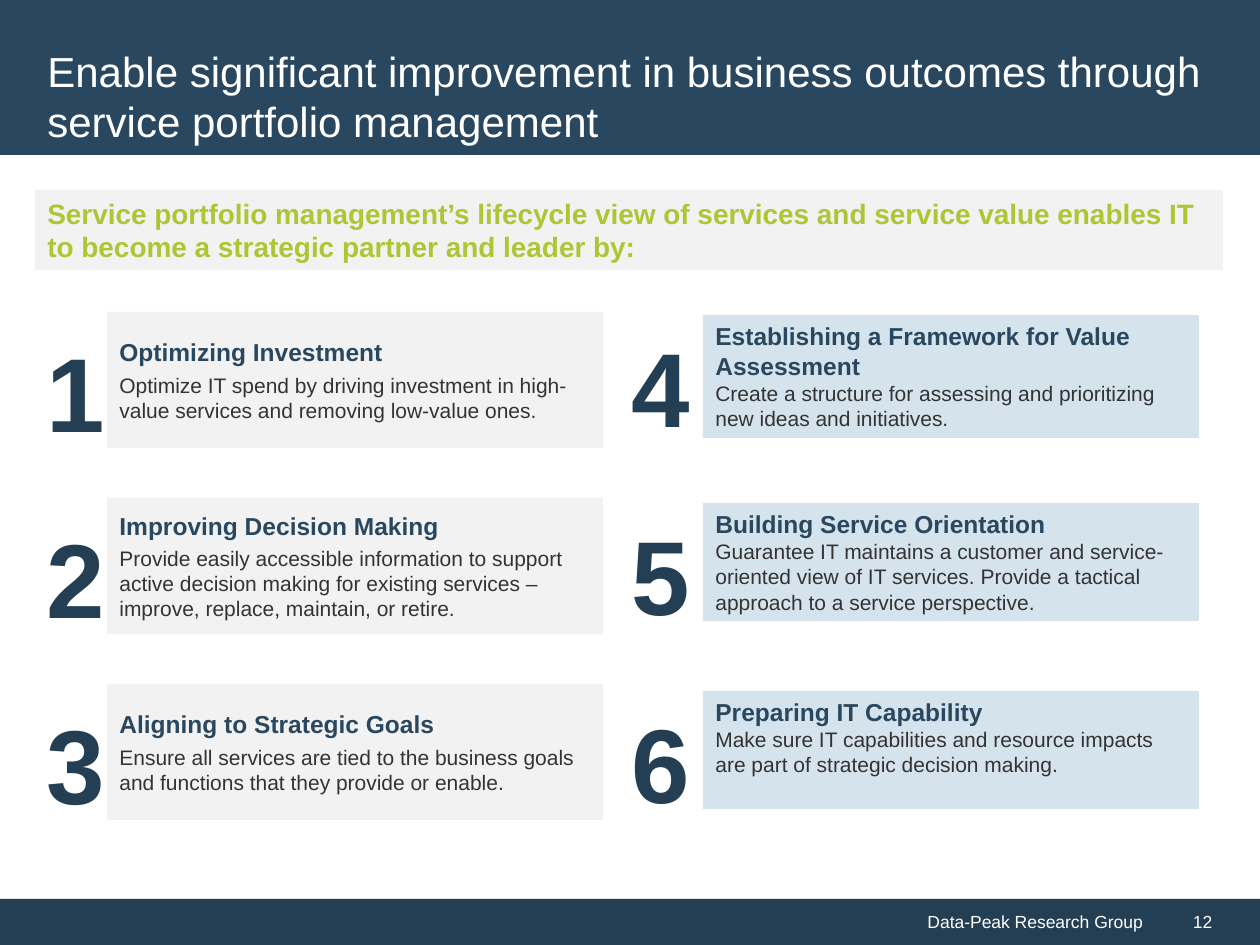
from pptx import Presentation
from pptx.dml.color import RGBColor
from pptx.enum.shapes import MSO_SHAPE
from pptx.enum.text import MSO_ANCHOR, PP_ALIGN
from pptx.util import Emu, Pt

PX = 914400 // 126
NAVY, BLUE, GREY, PALE = "243F54", "29475F", "F2F2F2", "D5E3ED"
WHITE, LIME, DARK = "FFFFFF", "B0C534", "333333"

TITLE = ("Enable significant improvement in business outcomes through "
         "service portfolio management")
LEAD = ("Service portfolio management’s lifecycle view of services and service "
        "value enables IT to become a strategic partner and leader by:")
FOOTER, PAGE = "Data-Peak Research Group", "12"

LEFT = [
    ("Optimizing Investment",
     "Optimize IT spend by driving investment in high-value services and "
     "removing low-value ones."),
    ("Improving Decision Making",
     "Provide easily accessible information to support active decision making "
     "for existing services – improve, replace, maintain, or retire."),
    ("Aligning to Strategic Goals",
     "Ensure all services are tied to the business goals and functions that "
     "they provide or enable."),
]
RIGHT = [
    ("Establishing a Framework for Value Assessment",
     "Create a structure for assessing and prioritizing new ideas and "
     "initiatives."),
    ("Building Service Orientation",
     "Guarantee IT maintains a customer and service-oriented view of IT "
     "services. Provide a tactical approach to a service perspective."),
    ("Preparing IT Capability",
     "Make sure IT capabilities and resource impacts are part of strategic "
     "decision making."),
]
COLUMNS = [
    dict(items=LEFT, first=1, x=107, y=312, step=186, heights=[136] * 3,
         fill=GREY, anchor=MSO_ANCHOR.MIDDLE, gap=3,
         num_x=34, num_y=321, num_w=116),
    dict(items=RIGHT, first=4, x=703, y=315, step=188, heights=[123, 118, 118],
         fill=PALE, anchor=MSO_ANCHOR.TOP, gap=0,
         num_x=619, num_y=316, num_w=139),
]


def color(text):
    return RGBColor.from_string(text)


def add_box(slide, x, y, w, h, fill=None):
    """Add a filled rectangle, or a plain text box when there is no fill."""
    area = [Emu(v * PX) for v in (x, y, w, h)]
    if fill is None:
        return slide.shapes.add_textbox(*area)
    box = slide.shapes.add_shape(MSO_SHAPE.RECTANGLE, *area)
    box.shadow.inherit = False
    box.fill.solid()
    box.fill.fore_color.rgb = color(fill)
    box.line.fill.background()
    return box


def write(box, lines, anchor=MSO_ANCHOR.TOP, align=PP_ALIGN.LEFT, gap=0):
    """Write (text, size, colour, bold) lines, one paragraph each."""
    frame = box.text_frame
    frame.text = "\n".join(line[0] for line in lines)
    frame.word_wrap = True
    frame.vertical_anchor = anchor
    for para, (_, size, tint, bold) in zip(frame.paragraphs, lines):
        para.alignment = align
        font = para.runs[0].font
        font.name, font.size, font.bold = "Arial", Pt(size), bold
        font.color.rgb = color(tint)
    if gap:
        frame.paragraphs[0].space_after = Pt(gap)


def add_column(slide, col):
    for i, (head, body) in enumerate(col["items"]):
        shift = i * col["step"]
        card = add_box(slide, col["x"], col["y"] + shift, 496,
                       col["heights"][i], col["fill"])
        write(card, [(head, 14, BLUE, True), (body, 12, DARK, False)],
              col["anchor"], gap=col["gap"])
        number = add_box(slide, col["num_x"], col["num_y"] + shift,
                         col["num_w"], 140)
        write(number, [(str(col["first"] + i), 60, NAVY, True)])


def main():
    deck = Presentation()
    deck.slide_width, deck.slide_height = Emu(1260 * PX), Emu(945 * PX)
    slide = deck.slides.add_slide(deck.slide_layouts[6])
    mid = MSO_ANCHOR.MIDDLE

    footer = add_box(slide, 0, 899, 1155, 46, NAVY)
    write(footer, [(FOOTER, 10, WHITE, False)], mid, PP_ALIGN.RIGHT)
    page = add_box(slide, 1155, 899, 105, 46, NAVY)
    write(page, [(PAGE, 10, WHITE, False)], mid)
    page.text_frame.margin_left = Emu(38 * PX)

    add_box(slide, 0, 0, 1260, 155, BLUE)
    title = add_box(slide, 35, 35, 1188, 121)
    write(title, [(TITLE, 24, WHITE, False)], mid)
    lead = add_box(slide, 35, 190, 1188, 80, GREY)
    write(lead, [(LEAD, 16, LIME, True)])

    for col in COLUMNS:
        add_column(slide, col)
    deck.save("out.pptx")


if __name__ == "__main__":
    main()
